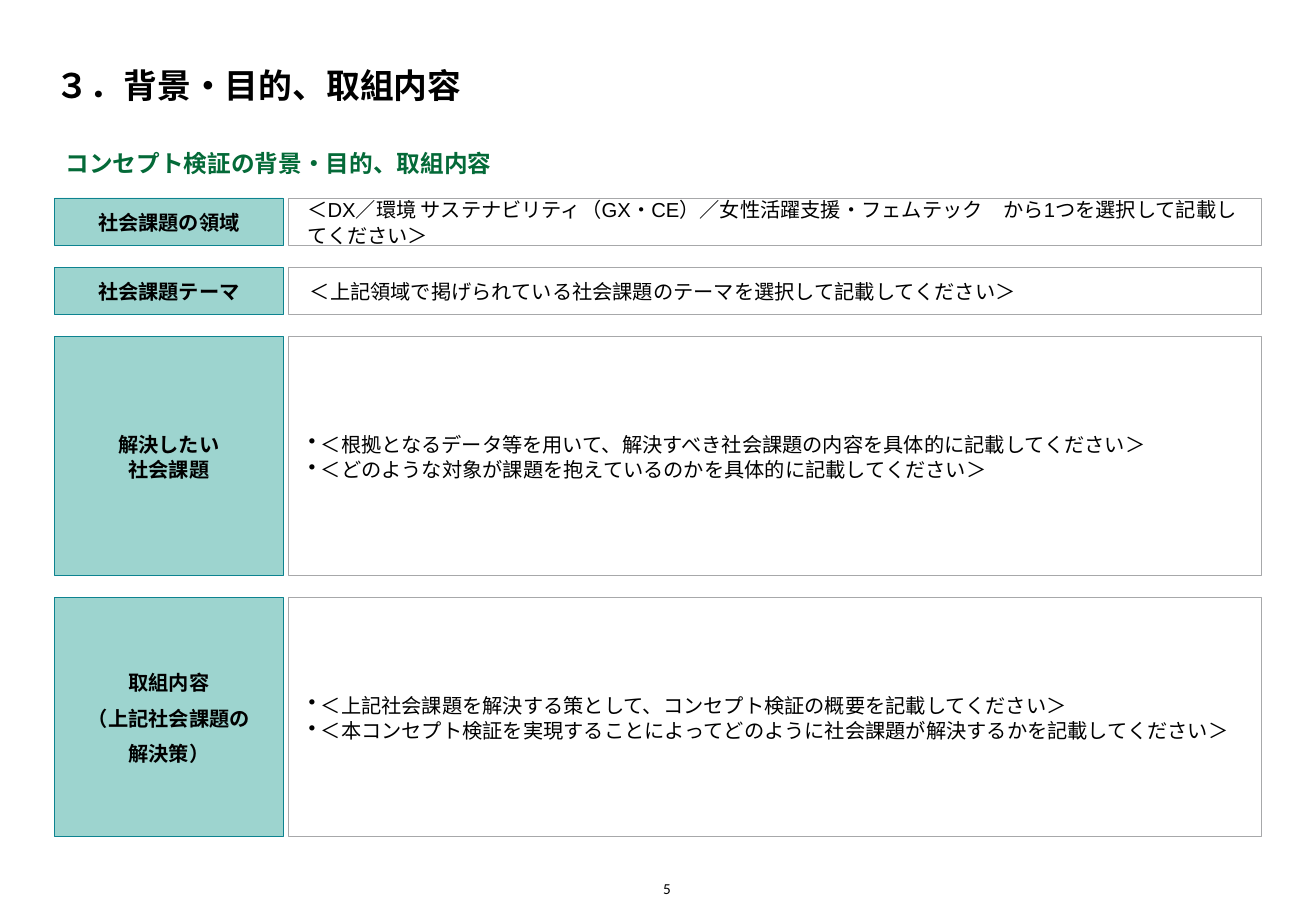
from lxml.etree import SubElement
from pptx import Presentation
from pptx.dml.color import RGBColor
from pptx.enum.shapes import MSO_SHAPE
from pptx.enum.text import MSO_ANCHOR, PP_ALIGN
from pptx.oxml.ns import qn
from pptx.util import Inches, Pt

BLACK = RGBColor(0x00, 0x00, 0x00)
WHITE = RGBColor(0xFF, 0xFF, 0xFF)
GREEN = RGBColor(0x04, 0x6A, 0x38)
MINT = RGBColor(0x9D, 0xD4, 0xCF)
TEAL = RGBColor(0x0D, 0x83, 0x90)
GRAY = RGBColor(0xA7, 0xA8, 0xAA)

FIRST_TOP = 1.63
ROW_GAP = 0.18
ROWS = [
    (0.39, ["社会課題の領域"],
     ["＜DX／環境 サステナビリティ（GX・CE）／女性活躍支援・フェムテック　から1つを選択して記載してください＞"],
     0.16, 0, False),
    (0.39, ["社会課題テーマ"],
     ["＜上記領域で掲げられている社会課題のテーマを選択して記載してください＞"],
     0.08, 0.1, False),
    (1.97, ["解決したい\n社会課題"],
     ["＜根拠となるデータ等を用いて、解決すべき社会課題の内容を具体的に記載してください＞",
      "＜どのような対象が課題を抱えているのかを具体的に記載してください＞"],
     0.08, 0.19, True),
    (1.97, ["取組内容", "（上記社会課題の", "解決策）"],
     ["＜上記社会課題を解決する策として、コンセプト検証の概要を記載してください＞",
      "＜本コンセプト検証を実現することによってどのように社会課題が解決するかを記載してください＞"],
     0.08, 0.19, True),
]


def set_frame(frame, anchor, left=0, other=0, wrap=True):
    frame.word_wrap = wrap
    frame.vertical_anchor = anchor
    frame.margin_left = Inches(left)
    frame.margin_top = frame.margin_right = frame.margin_bottom = Inches(other)


def set_font(para, name, size, color=BLACK, bold=False):
    para.font.name = name
    para.font.size = Pt(size)
    para.font.color.rgb = color
    para.font.bold = bold


def set_indent(para, indent, bullet):
    properties = para._p.get_or_add_pPr()
    properties.set("marL", str(Inches(indent)))
    properties.set("indent", str(Inches(-0.1 if bullet else 0)))
    if bullet:
        SubElement(properties, qn("a:buChar"), char="•")


def add_caption(page, text, bounds, size, color, anchor, align, left=0, bold=False):
    box = page.shapes.add_textbox(*map(Inches, bounds))
    set_frame(box.text_frame, anchor, left, wrap=False)
    para = box.text_frame.paragraphs[0]
    para.text = text
    para.alignment = align
    set_font(para, "Calibri", size, color, bold)


def add_panel(page, bounds, fill, line, left_margin=0.08):
    box = page.shapes.add_shape(MSO_SHAPE.RECTANGLE, *map(Inches, bounds))
    box.shadow.inherit = False
    box.fill.solid()
    box.fill.fore_color.rgb = fill
    box.line.color.rgb = line
    box.line.width = Pt(0.5)
    set_frame(box.text_frame, MSO_ANCHOR.MIDDLE, left_margin, 0.08)
    return box.text_frame


def fill_panel(frame, texts, align, space=0, indent=0, bullet=False, bold=False):
    for index, text in enumerate(texts):
        para = frame.add_paragraph() if index else frame.paragraphs[0]
        para.text = text
        para.alignment = align
        para.line_spacing = 1.06
        para.space_before = Pt(space if index else 0)
        set_indent(para, indent, bullet)
        set_font(para, "Arial", 12, bold=bold)


def add_title(page, text):
    title = page.shapes.title
    title.left, title.top, title.width, title.height = map(Inches, (0.46, 0.2, 9.92, 0.67))
    set_frame(title.text_frame, MSO_ANCHOR.BOTTOM)
    para = title.text_frame.paragraphs[0]
    para.text = text
    para.alignment = PP_ALIGN.LEFT
    set_font(para, "Calibri", 20, bold=True)


def add_rows(page):
    top = FIRST_TOP
    for height, label, content, margin, indent, bullet in ROWS:
        label_frame = add_panel(page, (0.45, top, 1.88, height), MINT, TEAL)
        fill_panel(label_frame, label, PP_ALIGN.CENTER, space=6, bold=True)
        content_frame = add_panel(page, (2.37, top, 8.01, height), WHITE, GRAY, margin)
        fill_panel(content_frame, content, PP_ALIGN.LEFT, indent=indent, bullet=bullet)
        top += height + ROW_GAP


def main():
    deck = Presentation()
    deck.slide_width, deck.slide_height = Inches(10.83), Inches(7.5)
    page = deck.slides.add_slide(deck.slide_layouts[5])
    add_title(page, "３．背景・目的、取組内容")
    add_caption(page, "コンセプト検証の背景・目的、取組内容", (0.46, 1.11, 4.76, 0.47),
                14, GREEN, MSO_ANCHOR.MIDDLE, PP_ALIGN.LEFT, left=0.08, bold=True)
    add_rows(page)
    add_caption(page, "5", (5.32, 7.2, 0.2, 0.19),
                9, BLACK, MSO_ANCHOR.BOTTOM, PP_ALIGN.RIGHT)
    deck.save("out.pptx")


if __name__ == "__main__":
    main()
